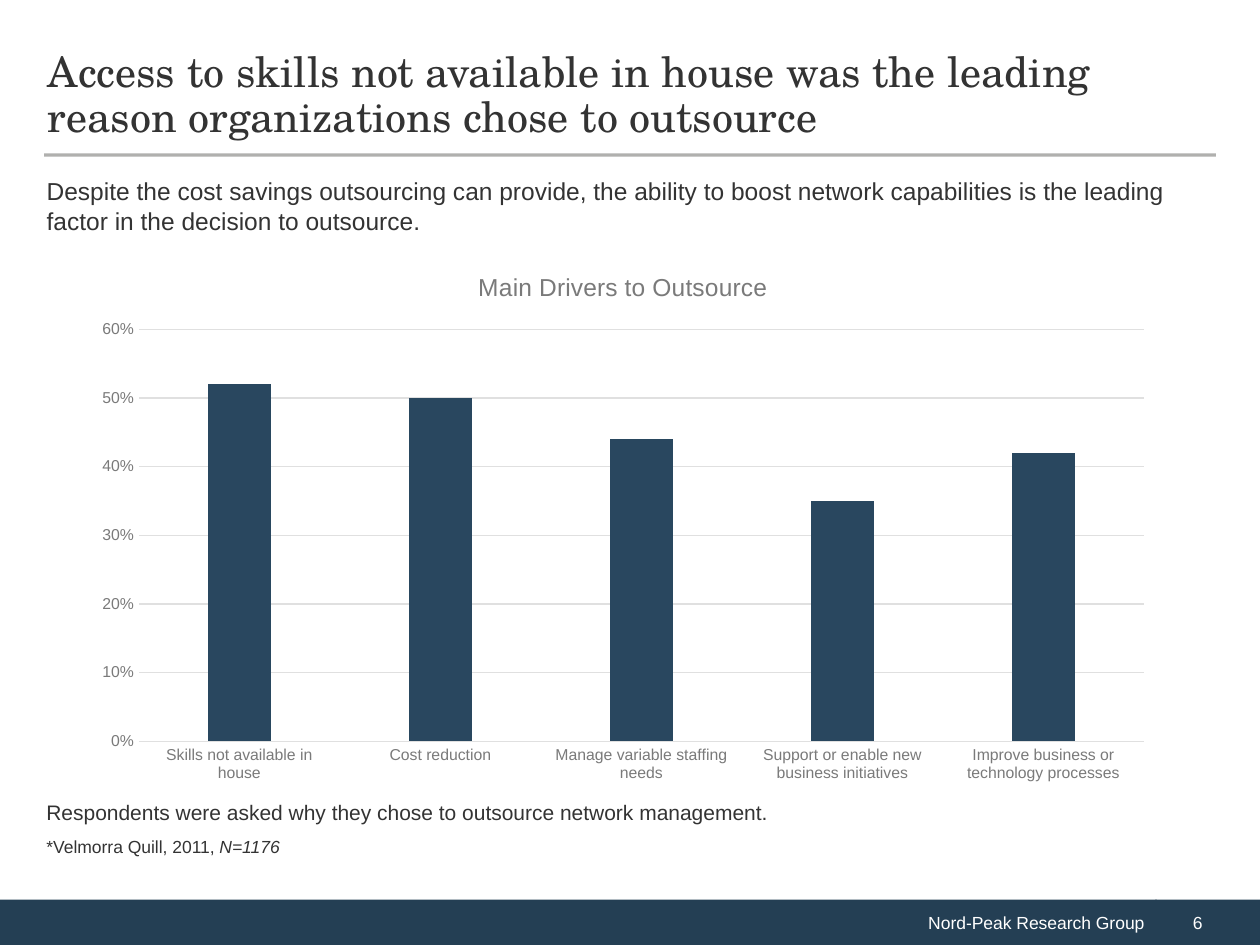
from dataclasses import dataclass

from lxml.etree import SubElement
from pptx import Presentation
from pptx.chart.data import CategoryChartData
from pptx.dml.color import RGBColor as Rgb
from pptx.enum.chart import XL_CHART_TYPE as Kind, XL_TICK_MARK as Tick
from pptx.enum.shapes import MSO_CONNECTOR as Link, MSO_SHAPE as Form
from pptx.enum.text import MSO_ANCHOR as Anchor, MSO_AUTO_SIZE as Fit, PP_ALIGN as Align
from pptx.oxml.ns import qn
from pptx.util import Inches, Pt


@dataclass(frozen=True)
class Theme:
    ink: str = "333333"
    grey: str = "7A7A7A"
    grid: str = "E0E0E0"
    rule: str = "45433E"
    bar: str = "29475F"
    band: str = "243F54"
    white: str = "FFFFFF"
    serif: str = "TeX Gyre Schola"
    sans: str = "Arial"
    head: int = 24
    lead: int = 14
    note: int = 12
    small: int = 10
    tick: int = 9


@dataclass(frozen=True)
class Box:
    left: float
    top: float
    width: float
    height: float

    def sides(self) -> tuple:
        return tuple(map(Inches, (self.left, self.top, self.width, self.height)))


@dataclass(frozen=True)
class Panel:
    text: str
    box: Box
    align: Align
    indent: float


@dataclass(frozen=True)
class Driver:
    name: str
    share: float


LOOK = Theme()
FOOT_TOP, FOOT_HIGH, FOOT_SPLIT = 7.14, 0.37, 9.17
SEAM = 0.01  # overlap that hides the joint between the two panels
PANELS = (
    Panel("Nord-Peak Research Group", Box(0, FOOT_TOP, FOOT_SPLIT + SEAM, FOOT_HIGH),
          Align.RIGHT, 0.29),
    Panel("6", Box(FOOT_SPLIT, FOOT_TOP, 10 - FOOT_SPLIT, FOOT_HIGH), Align.LEFT, 0.2),
)
DRIVERS = (
    Driver("Skills not available in house", 0.52),
    Driver("Cost reduction", 0.5),
    Driver("Manage variable staffing needs", 0.44),
    Driver("Support or enable new business initiatives", 0.35),
    Driver("Improve business or technology processes", 0.42),
)


def style(font, size: int, color: str, face: str = LOOK.sans) -> None:
    font.size, font.name, font.bold = Pt(size), face, False
    font.color.rgb = Rgb.from_string(color)


def add_run(para, text: str, size: int, color: str = LOOK.ink, face: str = LOOK.sans):
    run = para.add_run()
    run.text = text
    style(run.font, size, color, face)
    return run


def paint(line, color: str, width: float) -> None:
    line.color.rgb = Rgb.from_string(color)
    line.width = Pt(width)


def place(shape, box: Box, anchor: Anchor):
    """Move a placeholder and return its first paragraph."""
    shape.left, shape.top, shape.width, shape.height = box.sides()
    frame = shape.text_frame
    frame.auto_size, frame.word_wrap = Fit.NONE, True
    frame.vertical_anchor = anchor
    para = frame.paragraphs[0]
    para.alignment = Align.LEFT
    return para


def add_panel(slide, panel: Panel) -> None:
    shape = slide.shapes.add_shape(Form.RECTANGLE, *panel.box.sides())
    shape.shadow.inherit = False
    shape.fill.solid()
    shape.fill.fore_color.rgb = Rgb.from_string(LOOK.band)
    shape.line.fill.background()
    shape.text_frame.vertical_anchor = Anchor.MIDDLE
    para = shape.text_frame.paragraphs[0]
    para.alignment = panel.align
    para._p.get_or_add_pPr().set("marL", str(Inches(panel.indent)))
    add_run(para, panel.text, LOOK.small, LOOK.white)


def add_rule(slide) -> None:
    left, right, high = map(Inches, (0.35, 9.65, 1.23))
    rule = slide.shapes.add_connector(Link.STRAIGHT, left, high, right, high)
    paint(rule.line, LOOK.rule, 1.75)
    props = rule._element.spPr
    tint = props.find(".//" + qn("a:srgbClr"))
    SubElement(tint, qn("a:alpha"), val="42000")
    SubElement(props, qn("a:effectLst"))


def add_bars(slide, box: Box) -> None:
    data = CategoryChartData(number_format="0%")
    data.categories = [item.name for item in DRIVERS]
    data.add_series("Series 1", [item.share for item in DRIVERS])
    chart = slide.shapes.add_chart(Kind.COLUMN_CLUSTERED, *box.sides(), data).chart
    style(chart.font, LOOK.small, LOOK.ink)
    chart.has_legend = False
    chart.has_title = True
    title = chart.chart_title
    title.include_in_layout = False
    add_run(title.text_frame.paragraphs[0], "Main Drivers to Outsource", LOOK.lead, LOOK.grey)

    plot = chart.plots[0]
    plot.vary_by_categories = False
    plot.gap_width, plot.overlap = 219, -27
    fill = plot.series[0].format.fill
    fill.solid()
    fill.fore_color.rgb = Rgb.from_string(LOOK.bar)

    cats, vals = chart.category_axis, chart.value_axis
    for axis in (cats, vals):
        axis.major_tick_mark = axis.minor_tick_mark = Tick.NONE
        style(axis.tick_labels.font, LOOK.tick, LOOK.grey)
    paint(cats.format.line, LOOK.grid, 0.75)
    vals.format.line.fill.background()
    vals.minimum_scale, vals.maximum_scale, vals.major_unit = 0, 0.6, 0.1
    vals.has_major_gridlines = True
    paint(vals.major_gridlines.format.line, LOOK.grid, 0.75)
    vals.tick_labels.number_format = "0%"
    vals.tick_labels.number_format_is_linked = False


def add_notes(slide, box: Box) -> None:
    frame = slide.shapes.add_textbox(*box.sides()).text_frame
    frame.word_wrap, frame.auto_size = True, Fit.SHAPE_TO_FIT_TEXT
    add_run(frame.paragraphs[0],
            "Respondents were asked why they chose to outsource network management.", LOOK.note)
    para = frame.add_paragraph()
    para.line_spacing = 1.5
    add_run(para, "*Velmorra Quill, 2011, ", LOOK.small)
    add_run(para, "N=1176", LOOK.small).font.italic = True


def main() -> None:
    deck = Presentation()
    deck.slide_width, deck.slide_height = Inches(10), Inches(7.5)
    slide = deck.slides.add_slide(deck.slide_layouts[1])
    for panel in PANELS:
        add_panel(slide, panel)
    add_rule(slide)
    add_bars(slide, Box(0.64, 1.98, 8.61, 4.32))

    head = place(slide.shapes.title, Box(0.28, 0.29, 9.43, 0.94), Anchor.MIDDLE)
    head.line_spacing = Pt(26)
    add_run(head, "Access to skills not available in house was the leading "
            "reason organizations chose to outsource", LOOK.head, face=LOOK.serif)

    lead = place(slide.placeholders[1], Box(0.27, 1.35, 9.44, 0.51), Anchor.TOP)
    lead.space_before = Pt(5)
    props = lead._p.get_or_add_pPr()
    props.set("marL", "0")
    props.set("indent", "0")
    SubElement(props, qn("a:buNone"))
    add_run(lead, "Despite the cost savings outsourcing can provide, the ability to boost "
            "network capabilities is the leading factor in the decision to outsource.", LOOK.lead)

    add_notes(slide, Box(0.27, 6.3, 6.44, 0.56))
    deck.save("out.pptx")


if __name__ == "__main__":
    main()
